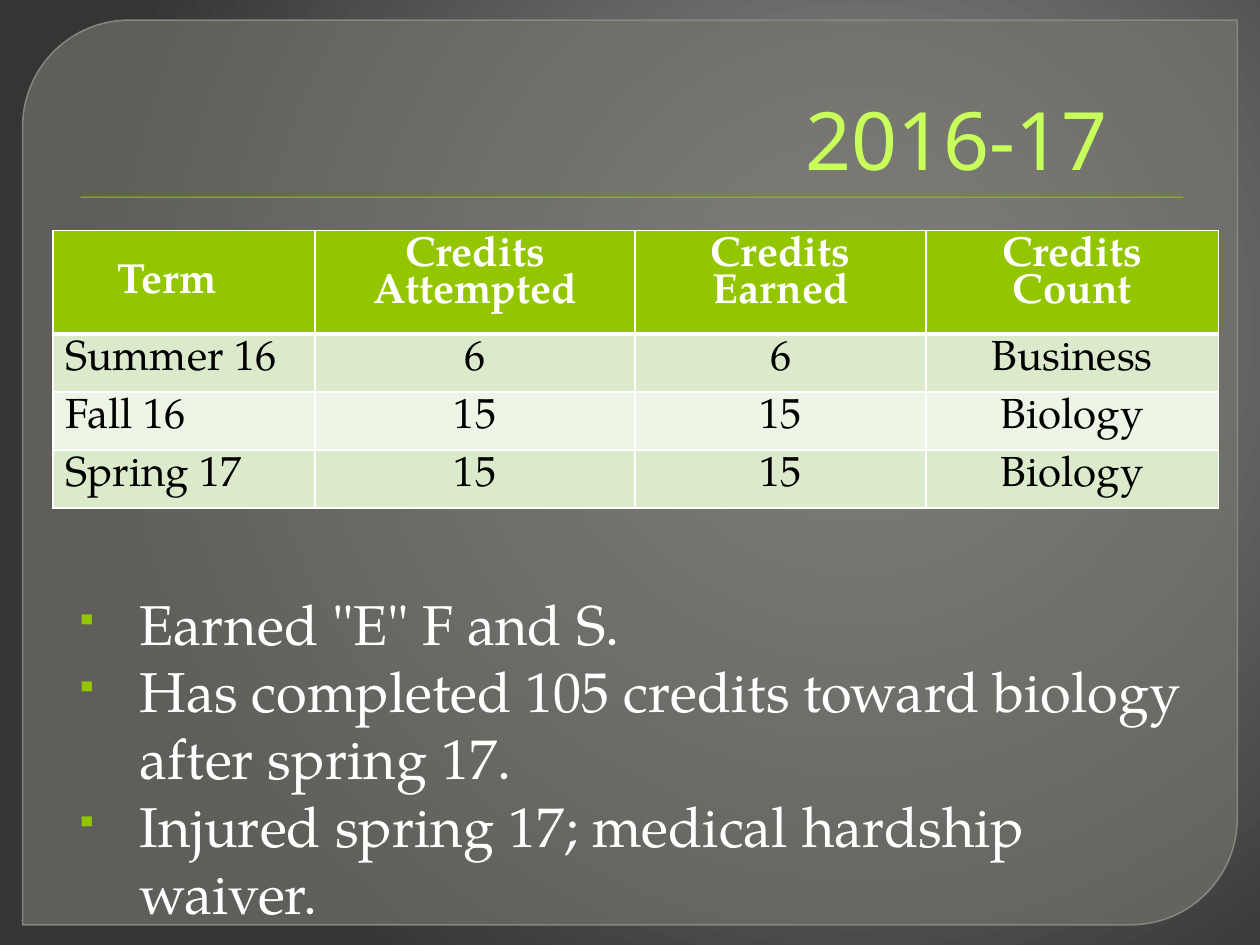
from pptx import Presentation
from pptx.dml.color import RGBColor
from pptx.enum.shapes import MSO_SHAPE
from pptx.enum.text import MSO_ANCHOR, PP_ALIGN
from pptx.oxml import parse_xml
from pptx.oxml.ns import nsdecls
from pptx.util import Inches, Pt

PANEL, RECT = MSO_SHAPE.ROUND_2_DIAG_RECTANGLE, MSO_SHAPE.RECTANGLE
LEFT, MID, RIGHT = PP_ALIGN.LEFT, PP_ALIGN.CENTER, PP_ALIGN.RIGHT
TOP, CENTRE, LOW = MSO_ANCHOR.TOP, MSO_ANCHOR.MIDDLE, MSO_ANCHOR.BOTTOM

# Content
TITLE = "2016-17"
HEAD = ["Term", "Credits Attempted", "Credits Earned", "Credits Count"]
TERMS = [
    ["Summer 16", "6", "6", "Business"],
    ["Fall 16", "15", "15", "Biology"],
    ["Spring 17", "15", "15", "Biology"],
]
NOTES = [
    'Earned "E" F and S.',
    "Has completed 105 credits toward biology after spring 17.",
    "Injured spring 17; medical hardship waiver.",
]

# Format
COLOR = {"panel": "76756E", "edge": "8D8D86", "green": "94C600", "lime": "C9FF5B",
         "white": "FFFFFF", "black": "000000", "odd": "DCEACC", "even": "EEF5E7"}
GLOW = [(0, "8C8C8C"), (20, "7F7F7F"), (100, "353535")]
SERIF = "TeX Gyre Pagella"
FONT = {
    "title": {"name": "Noto Sans", "size": Pt(46)},
    "head": {"name": SERIF, "size": Pt(24), "bold": True},
    "cell": {"name": SERIF, "size": Pt(24), "bold": False},
    "note": {"name": SERIF, "size": Pt(32)},
}
COLS = [2.08, 2.54, 2.31, 2.32]
HEAD_H, ROW_H = 0.74, 0.44
INDENT = Inches(0.51)


def rgb(name):
    return RGBColor.from_string(COLOR[name])


def xml(tag, body, attrs=""):
    return parse_xml(f"<{tag} {nsdecls('a', 'p')} {attrs}>{body}</{tag}>")


def write(para, text, style, color, align=LEFT):
    para.alignment = align
    run = para.add_run()
    run.text = text
    for key, value in FONT[style].items():
        setattr(run.font, key, value)
    run.font.color.rgb = rgb(color)


def block(kind, box, color):
    shape = slide.shapes.add_shape(kind, *map(Inches, box))
    shape.shadow.inherit = False
    shape.fill.solid()
    shape.fill.fore_color.rgb = rgb(color)
    shape.line.fill.background()
    return shape


def fade(tone, share):
    tone.append(xml("a:alpha", "", f'val="{share * 1000}"'))


def frame(box, anchor):
    text = slide.shapes.add_textbox(*map(Inches, box)).text_frame
    text.word_wrap = True
    text.vertical_anchor = anchor
    return text


def border(cell, widths):
    props = cell._tc.get_or_add_tcPr()
    for spot, (side, width) in enumerate(zip("LRTB", widths)):
        fill = f'<a:solidFill><a:srgbClr val="{COLOR["white"]}"/></a:solidFill>'
        props.insert(spot, xml(f"a:ln{side}", fill, f'w="{Pt(width)}"'))


deck = Presentation()
deck.slide_width, deck.slide_height = Inches(10), Inches(7.5)
slide = deck.slides.add_slide(deck.slide_layouts[6])

# Background glow
stops = "".join(f'<a:gs pos="{at * 1000}"><a:srgbClr val="{tone}"/></a:gs>' for at, tone in GLOW)
slide._element.cSld.insert(0, xml("p:bg", f"""<p:bgPr><a:gradFill rotWithShape="1">
    <a:gsLst>{stops}</a:gsLst><a:path path="circle">
    <a:fillToRect l="68000" t="35000" r="32000" b="65000"/></a:path>
    </a:gradFill><a:effectLst/></p:bgPr>"""))

# Panel and rule under the title
panel = block(PANEL, (0.18, 0.16, 9.64, 7.18), "panel")
panel.adjustments[0], panel.adjustments[1] = 0.118, 0
panel.line.color.rgb = rgb("edge")
panel.line.width = Pt(0.87)
for tone, share in zip(panel._element.spPr.iter("{*}srgbClr"), (65, 88)):
    fade(tone, share)
rule = block(RECT, (0.64, 1.56, 8.75, 0.01), "green")
rule._element.spPr.find("{*}effectLst").append(xml(
    "a:outerShdw", '<a:srgbClr val="000000"><a:alpha val="75000"/></a:srgbClr>',
    f'blurRad="{Pt(1)}" dist="{Pt(1)}" dir="5400000"'))

# Title
title = frame((0.5, 0.28, 9, 1.25), LOW)
title.margin_right, title.margin_bottom = Inches(0.71), Inches(0.05)
write(title.paragraphs[0], TITLE, "title", "lime", RIGHT)

# Notes
notes = frame((0.5, 4.63, 9, 2.87), TOP)
for i, note in enumerate(NOTES):
    para = notes.add_paragraph() if i else notes.paragraphs[0]
    write(para, note, "note", "white")
    props = para._p.get_or_add_pPr()
    props.set("marL", str(INDENT))
    props.set("indent", str(-INDENT))
    props.append(xml("a:buClr", f'<a:srgbClr val="{COLOR["green"]}"/>'))
    props.append(xml("a:buSzPct", "", 'val="55000"'))
    props.append(xml("a:buChar", "", 'char="▪"'))

# Credits table
rows = [HEAD] + TERMS
size = (sum(COLS), HEAD_H + ROW_H * len(TERMS))
table = slide.shapes.add_table(len(rows), len(COLS), *map(Inches, (0.42, 1.83, *size))).table
for col, width in zip(table.columns, COLS):
    col.width = Inches(width)
for r, row in enumerate(rows):
    table.rows[r].height = Inches(ROW_H if r else HEAD_H)
    fill = ("odd" if r % 2 else "even") if r else "green"
    for c, text in enumerate(row):
        cell = table.cell(r, c)
        cell.fill.solid()
        cell.fill.fore_color.rgb = rgb(fill)
        para = cell.text_frame.paragraphs[0]
        para.line_spacing = 0.9
        write(para, text, "cell" if r else "head", "black" if r else "white", MID if c else LEFT)
        border(cell, (1, 1, 3 if r == 1 else 1, 1 if r else 3))
term = table.cell(0, 0)
term.vertical_anchor = CENTRE
term.margin_left = Inches(0.51)

deck.save("out.pptx")
